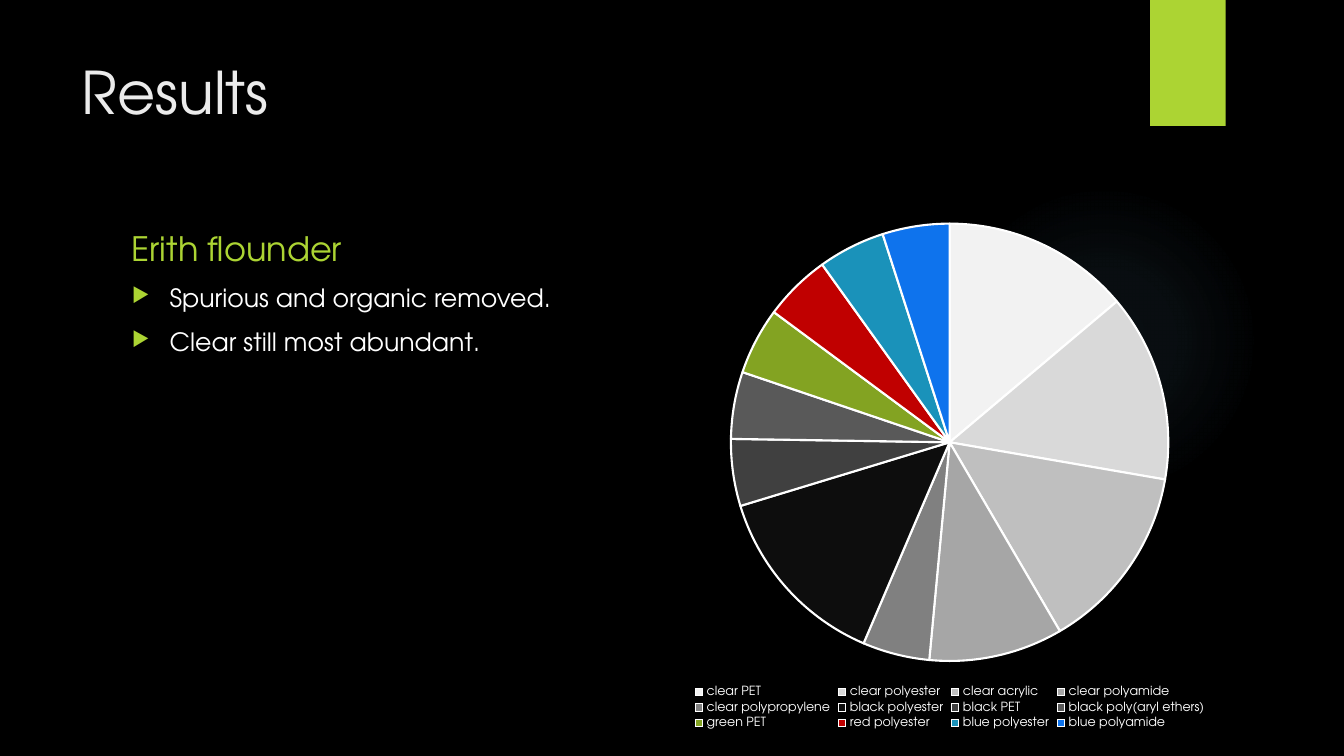
"""Build the Results slide with its bullets and pie chart of fibre types."""
from dataclasses import dataclass

from lxml import etree
from pptx import Presentation
from pptx.chart.data import CategoryChartData
from pptx.dml.color import RGBColor
from pptx.enum.chart import XL_CHART_TYPE, XL_LEGEND_POSITION
from pptx.enum.shapes import MSO_SHAPE
from pptx.enum.text import MSO_ANCHOR, PP_ALIGN
from pptx.oxml import parse_xml
from pptx.oxml.ns import nsdecls, qn
from pptx.util import Pt

PIE = XL_CHART_TYPE.PIE
LEGEND_BOTTOM = XL_LEGEND_POSITION.BOTTOM
OVAL, RECTANGLE = MSO_SHAPE.OVAL, MSO_SHAPE.RECTANGLE
TOP, BOTTOM = MSO_ANCHOR.TOP, MSO_ANCHOR.BOTTOM
LEFT = PP_ALIGN.LEFT

FONT = "TeX Gyre Adventor"
COLORS = {
    "background": "000000",
    "accent": "ACD433",
    "title": "EBEBEB",
    "text": "FFFFFF",
    "glow": "7AC4F0",
}
GLOW_STOPS = [(0, 7), (36, 6), (69, 0)]


@dataclass
class Box:
    """A rectangle on the slide, in points."""
    left: float
    top: float
    width: float
    height: float

    def emu(self) -> list:
        """Return the four lengths for a shape call."""
        return [Pt(v) for v in (self.left, self.top, self.width, self.height)]


@dataclass
class TextBlock:
    """Paragraphs that share one box and one style."""
    box: Box
    lines: list
    size: float
    color: str
    anchor: MSO_ANCHOR = TOP
    bullets: bool = False


@dataclass
class Slice:
    """One sector of the pie."""
    name: str
    value: int
    color: str


TITLE = TextBlock(Box(51.1, 36, 740.9, 110.2), ["Results"], 42, COLORS["title"])
BLOCKS = [
    TextBlock(Box(87.1, 149.8, 346.3, 45.4), ["Erith flounder"], 24,
              COLORS["accent"], BOTTOM),
    TextBlock(Box(87.1, 198, 346.3, 294.5),
              ["Spurious and organic removed.", "Clear still most abundant."], 18,
              COLORS["text"], bullets=True),
]
SLICES = [
    Slice("clear PET", 14, "F2F2F2"),
    Slice("clear polyester", 14, "D9D9D9"),
    Slice("clear acrylic", 14, "BFBFBF"),
    Slice("clear polyamide", 10, "A6A6A6"),
    Slice("clear polypropylene", 5, "808080"),
    Slice("black polyester", 14, "0D0D0D"),
    Slice("black PET", 5, "404040"),
    Slice("black poly(aryl ethers)", 5, "595959"),
    Slice("green PET", 5, "83A322"),
    Slice("red polyester", 5, "C00000"),
    Slice("blue polyester", 5, "1A92BA"),
    Slice("blue polyamide", 5, "0E73ED"),
]


def set_font(font, size: float, color: str) -> None:
    """Apply the slide's typeface with a size and colour."""
    for name, value in {"name": FONT, "size": Pt(size), "bold": False}.items():
        setattr(font, name, value)
    font.color.rgb = RGBColor.from_string(color)


def add_bullet(p) -> None:
    """Give a paragraph a hanging accent-coloured triangle."""
    pPr = p._p.get_or_add_pPr()
    pPr.set("marL", str(Pt(27)))
    pPr.set("indent", str(-Pt(27)))
    clr = etree.SubElement(pPr, qn("a:buClr"))
    etree.SubElement(clr, qn("a:srgbClr"), val=COLORS["accent"])
    etree.SubElement(pPr, qn("a:buSzPct"), val="80000")
    etree.SubElement(pPr, qn("a:buChar"), char="▶")


def fill_text(sp, block: TextBlock) -> None:
    """Write a block's paragraphs into a shape."""
    tf = sp.text_frame
    for name, value in {"word_wrap": True, "vertical_anchor": block.anchor}.items():
        setattr(tf, name, value)
    for i, line in enumerate(block.lines):
        p = tf.add_paragraph() if i else tf.paragraphs[0]
        p.alignment = LEFT
        p.space_before = Pt(10 if i else 0)
        if block.bullets:
            add_bullet(p)
        r = p.add_run()
        r.text = line
        set_font(r.font, block.size, block.color)


def add_plain_shape(s, kind: MSO_SHAPE, box: Box, color: str):
    """Add a filled shape without outline or shadow."""
    sp = s.shapes.add_shape(kind, *box.emu())
    sp.shadow.inherit = False
    sp.fill.solid()
    sp.fill.fore_color.rgb = RGBColor.from_string(color)
    sp.line.fill.background()
    return sp


def add_glow(s, box: Box) -> None:
    """Add a faint radial glow."""
    sp = add_plain_shape(s, OVAL, box, COLORS["glow"])
    stops = "".join(
        f'<a:gs pos="{pos * 1000}"><a:srgbClr val="{COLORS["glow"]}">'
        f'<a:alpha val="{alpha * 1000}"/></a:srgbClr></a:gs>'
        for pos, alpha in GLOW_STOPS)
    grad = parse_xml(
        f'<a:gradFill {nsdecls("a")}><a:gsLst>{stops}</a:gsLst><a:path path="circle">'
        '<a:fillToRect l="50000" t="50000" r="50000" b="50000"/></a:path></a:gradFill>')
    spPr = sp._element.spPr
    spPr.replace(spPr.find(qn("a:solidFill")), grad)


def add_pie(s, box: Box, slices: list) -> None:
    """Add the pie chart with its legend below."""
    data = CategoryChartData()
    data.categories = [x.name for x in slices]
    data.add_series("Series 1", [x.value for x in slices])
    chart = s.shapes.add_chart(PIE, *box.emu(), data).chart
    chart.has_title = False
    set_font(chart.font, 10, COLORS["text"])
    chart.has_legend = True
    legend = chart.legend
    for name, value in {"position": LEGEND_BOTTOM, "include_in_layout": False}.items():
        setattr(legend, name, value)
    set_font(legend.font, 9, COLORS["text"])
    plot = chart.plots[0]
    plot.vary_by_categories = True
    for i, x in enumerate(slices):
        fmt = plot.series[0].points[i].format
        fmt.fill.solid()
        fmt.fill.fore_color.rgb = RGBColor.from_string(x.color)
        fmt.line.color.rgb = RGBColor.from_string(COLORS["text"])
        fmt.line.width = Pt(1.5)


def main() -> None:
    """Build and save the slide."""
    prs = Presentation()
    prs.slide_width, prs.slide_height = Pt(960), Pt(540)
    s = prs.slides.add_slide(prs.slide_layouts[5])
    fill = s.background.fill
    fill.solid()
    fill.fore_color.rgb = RGBColor.from_string(COLORS["background"])

    add_glow(s, Box(677.5, 131.8, 221.8, 221.8))
    add_plain_shape(s, RECTANGLE, Box(821.5, 0, 54, 90), COLORS["accent"])

    title = s.shapes.title
    for name, value in zip(("left", "top", "width", "height"), TITLE.box.emu()):
        setattr(title, name, value)
    fill_text(title, TITLE)
    for block in BLOCKS:
        fill_text(s.shapes.add_textbox(*block.box.emu()), block)

    add_pie(s, Box(445, 149.8, 466.6, 373.7), SLICES)
    prs.save("out.pptx")


if __name__ == "__main__":
    main()
